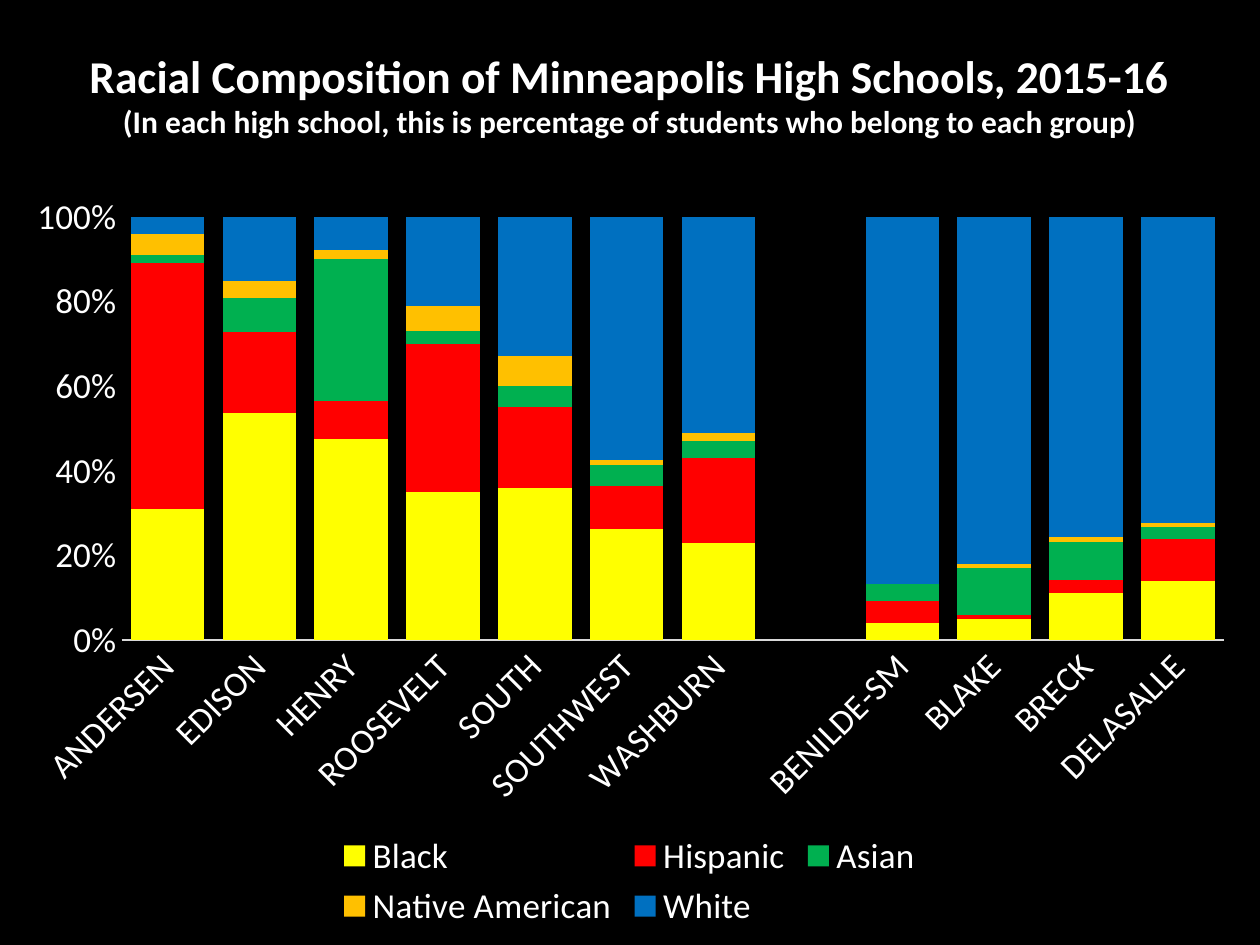
from dataclasses import dataclass

from lxml import etree
from pptx import Presentation
from pptx import util as u
from pptx.chart.data import CategoryChartData
from pptx.dml.color import RGBColor
from pptx.enum import chart as charts, text
from pptx.oxml import ns


@dataclass(frozen=True)
class Theme:
    font: str = "Calibri"
    background: str = "000000"
    foreground: str = "FFFFFF"
    axis_line: str = "D9D9D9"
    title_size: int = 26
    subtitle_size: int = 18
    chart_size: int = 20


THEME = Theme()

TITLE_LINES = [
    ("Racial Composition of Minneapolis High Schools, 2015-16", THEME.title_size),
    ("(In each high school, this is percentage of students who belong to each group)",
     THEME.subtitle_size),
]

# The empty category separates the two groups of schools
SCHOOLS = ["ANDERSEN", "EDISON", "HENRY", "ROOSEVELT", "SOUTH", "SOUTHWEST",
           "WASHBURN", "", "BENILDE-SM", "BLAKE", "BRECK", "DELASALLE"]
GROUPS = [
    ("Black", "FFFF00", [31, 53, 48, 35, 36, 26, 23, None, 4, 5, 11, 14]),
    ("Hispanic", "FF0000", [58, 19, 9, 35, 19, 10, 20, None, 5, 1, 3, 10]),
    ("Asian", "00B050", [2, 8, 34, 3, 5, 5, 4, None, 4, 11, 9, 3]),
    ("Native American", "FFC000", [5, 4, 2, 6, 7, 1, 2, None, 0, 1, 1, 1]),
    ("White", "0070C0", [4, 15, 8, 21, 33, 57, 51, None, 86, 82, 75, 73]),
]


def apply_format(target, values):
    for name, value in values.items():
        setattr(target, name, value)


def format_font(font, size, bold=False):
    apply_format(font, {"name": THEME.font, "size": u.Pt(size), "bold": bold})
    font.color.rgb = RGBColor.from_string(THEME.foreground)


def set_fill(fill, color):
    fill.solid()
    fill.fore_color.rgb = RGBColor.from_string(color)


def add_title(slide):
    shape = slide.shapes.add_textbox(
        u.Inches(0.57), u.Inches(0.33), u.Inches(8.86), u.Inches(0.84))
    frame = shape.text_frame
    apply_format(frame, {"word_wrap": False,
                         "auto_size": text.MSO_AUTO_SIZE.SHAPE_TO_FIT_TEXT})
    for index, (line, size) in enumerate(TITLE_LINES):
        paragraph = frame.add_paragraph() if index else frame.paragraphs[0]
        paragraph.alignment = text.PP_ALIGN.CENTER
        run = paragraph.add_run()
        run.text = line
        format_font(run.font, size, bold=True)


def set_plot_area(chart, **box):
    """Fix the inner plot area, in fractions of the chart."""
    plot_area = chart.element.find(".//" + ns.qn("c:plotArea"))
    layout = plot_area.find(ns.qn("c:layout"))
    if layout is None:
        layout = etree.Element(ns.qn("c:layout"))
        plot_area.insert(0, layout)
    manual = etree.SubElement(layout, ns.qn("c:manualLayout"))
    settings = {"layoutTarget": "inner", "xMode": "edge", "yMode": "edge", **box}
    for name, value in settings.items():
        etree.SubElement(manual, ns.qn("c:" + name)).set("val", str(value))


def format_axes(chart):
    category_axis, value_axis = chart.category_axis, chart.value_axis
    for axis in (category_axis, value_axis):
        apply_format(axis, {"has_major_gridlines": False,
                            "major_tick_mark": charts.XL_TICK_MARK.NONE,
                            "minor_tick_mark": charts.XL_TICK_MARK.NONE})
        format_font(axis.tick_labels.font, THEME.chart_size)

    line = category_axis.format.line
    set_fill(line.fill, THEME.axis_line)
    line.width = u.Pt(0.75)
    value_axis.format.line.fill.background()
    apply_format(value_axis, {"minimum_scale": 0, "maximum_scale": 1,
                              "major_unit": 0.2})
    apply_format(value_axis.tick_labels, {"number_format": "0%",
                                          "number_format_is_linked": False})

    # Slant the school names by 45 degrees
    body = chart.element.find(".//" + ns.qn("c:catAx")).find(".//" + ns.qn("a:bodyPr"))
    body.set("rot", str(-45 * 60000))
    body.set("vert", "horz")


def add_composition_chart(slide):
    data = CategoryChartData()
    data.categories = SCHOOLS
    for name, _, values in GROUPS:
        data.add_series(name, values)
    chart = slide.shapes.add_chart(
        charts.XL_CHART_TYPE.COLUMN_STACKED_100,
        u.Inches(0.08), u.Inches(1.42), u.Inches(9.83), u.Inches(6), data).chart
    apply_format(chart, {"has_title": False, "has_legend": True})
    format_font(chart.font, THEME.chart_size)

    # Columns
    plot = chart.plots[0]
    apply_format(plot, {"gap_width": 25, "overlap": 100,
                        "vary_by_categories": False})
    for series, (_, color, _) in zip(plot.series, GROUPS):
        set_fill(series.format.fill, color)

    # Axes, plot area and legend
    format_axes(chart)
    set_plot_area(chart, x=0.09, y=0.05, w=0.89, h=0.56)
    apply_format(chart.legend, {"position": charts.XL_LEGEND_POSITION.BOTTOM,
                                "include_in_layout": False})
    format_font(chart.legend.font, THEME.chart_size)


def main():
    presentation = Presentation()
    apply_format(presentation, {"slide_width": u.Inches(10),
                                "slide_height": u.Inches(7.5)})
    slide = presentation.slides.add_slide(presentation.slide_layouts[6])
    set_fill(slide.background.fill, THEME.background)
    add_composition_chart(slide)
    add_title(slide)
    presentation.save("out.pptx")


if __name__ == "__main__":
    main()
